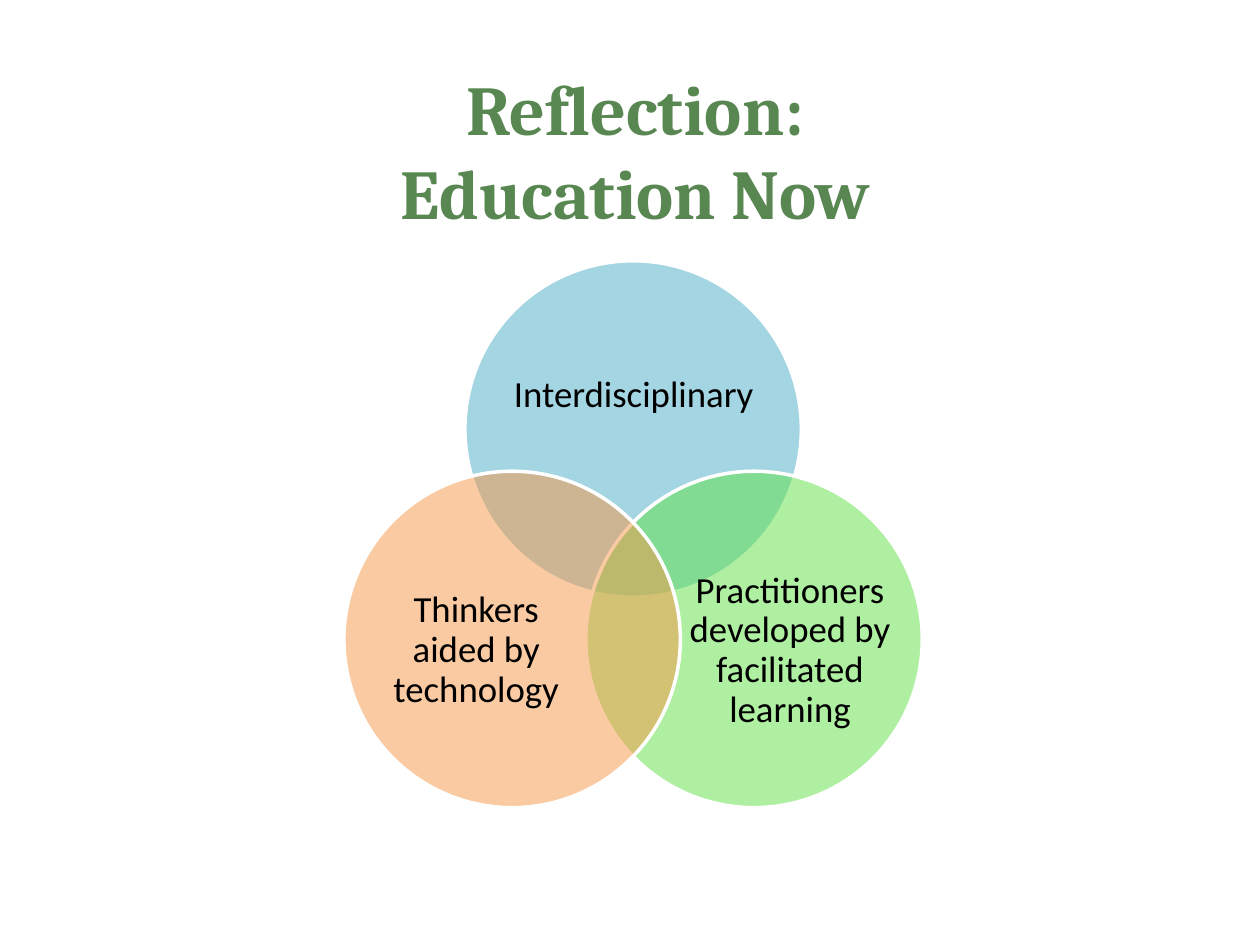
from lxml import etree
from pptx import Presentation
from pptx.dml.color import RGBColor
from pptx.enum.shapes import MSO_SHAPE
from pptx.enum.text import MSO_ANCHOR, MSO_AUTO_SIZE, PP_ALIGN
from pptx.oxml.ns import qn
from pptx.util import Inches, Pt

OVAL = MSO_SHAPE.OVAL
TOP, MIDDLE = MSO_ANCHOR.TOP, MSO_ANCHOR.MIDDLE
CENTER = PP_ALIGN.CENTER
NO_FIT = MSO_AUTO_SIZE.NONE

COLORS = {
    "title": "598752",
    "text": "000000",
    "edge": "FFFFFF",
    "blue": "4BACC6",
    "green": "60E146",
    "orange": "F79646",
}
SIZE = 2.67  # circle diameter
MID, HIGH = 3.69, 2.07  # corner of the top circle
SHIFT, DROP = 0.96, 1.67  # from the top circle to the lower ones


class Venn:
    """Holds the slide and the style of its title, circles and labels."""

    head_font, body_font = "Cambria", "Calibri"
    head_size, body_size = Pt(40), Pt(21)

    def __init__(self, slide):
        self.slide = slide

    def set_text(self, shape, lines, font, size, color, gap, anchor,
                 bold=False):
        frame = shape.text_frame
        frame.word_wrap = True
        frame.auto_size = NO_FIT
        frame.vertical_anchor = anchor
        frame.margin_left = frame.margin_right = 0
        frame.margin_top = frame.margin_bottom = 0
        for i, line in enumerate(lines):
            para = frame.add_paragraph() if i else frame.paragraphs[0]
            para.alignment = CENTER
            para.line_spacing = gap
            para.space_before = Pt(0)
            run = para.add_run()
            run.text = line
            run.font.name = font
            run.font.size = size
            run.font.bold = bold
            run.font.color.rgb = RGBColor.from_string(COLORS[color])

    def title(self, lines, left, top, width, height):
        shape = self.slide.shapes.title
        shape.left, shape.top = Inches(left), Inches(top)
        shape.width, shape.height = Inches(width), Inches(height)
        self.set_text(shape, lines, self.head_font, self.head_size,
                      "title", Pt(48), TOP, bold=True)

    def circle(self, color, left, top):
        """Draw a half-transparent circle with a white edge."""
        shape = self.slide.shapes.add_shape(
            OVAL, Inches(left), Inches(top), Inches(SIZE), Inches(SIZE))
        shape.shadow.inherit = False
        shape.fill.solid()
        shape.fill.fore_color.rgb = RGBColor.from_string(COLORS[color])
        tint = shape.element.spPr.find(qn("a:solidFill"))[0]
        etree.SubElement(tint, qn("a:alpha")).set("val", "50000")
        shape.line.color.rgb = RGBColor.from_string(COLORS["edge"])
        shape.line.width = Pt(2)

    def label(self, text, left, top, width, height):
        box = self.slide.shapes.add_textbox(
            Inches(left), Inches(top), Inches(width), Inches(height))
        self.set_text(box, [text], self.body_font, self.body_size,
                      "text", 0.9, MIDDLE)


def main():
    deck = Presentation()
    deck.slide_width, deck.slide_height = Inches(10), Inches(7.5)
    venn = Venn(deck.slides.add_slide(deck.slide_layouts[5]))
    venn.title(["Reflection:", "Education Now"], 0.59, 0.52, 8.9, 0.87)

    low = HIGH + DROP
    sets = [
        ("blue", MID, HIGH, "Interdisciplinary", (4.05, 2.54, 1.96, 1.2)),
        ("green", MID + SHIFT, low,
         "Practitioners developed by facilitated learning",
         (5.47, 4.43, 1.6, 1.47)),
        ("orange", MID - SHIFT, low, "Thinkers aided by technology",
         (2.98, 4.43, 1.6, 1.47)),
    ]
    for color, left, top, text, area in sets:
        venn.circle(color, left, top)
        venn.label(text, *area)
    deck.save("out.pptx")


if __name__ == "__main__":
    main()
